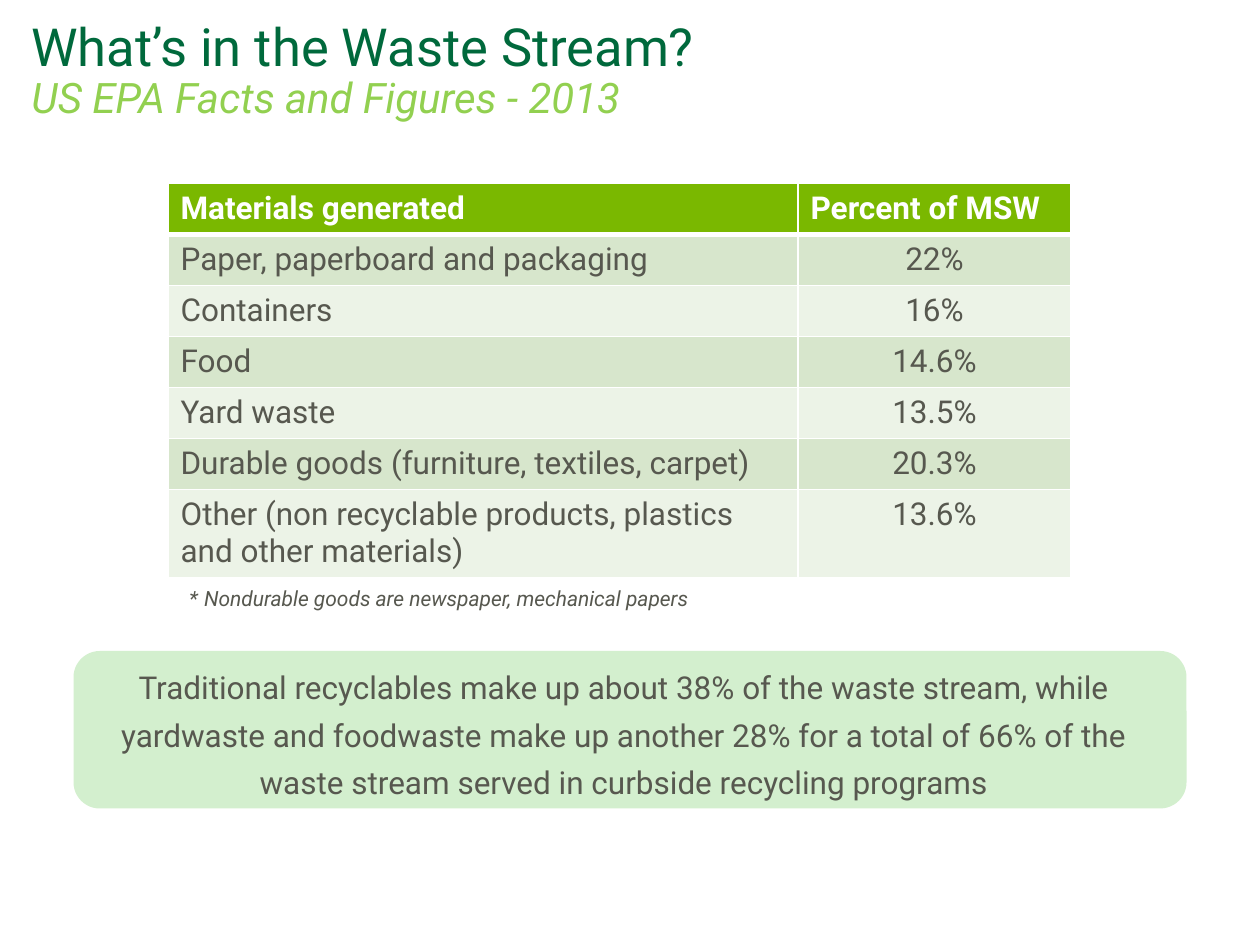
from lxml import etree
from pptx import Presentation, util as u
from pptx.dml.color import RGBColor
from pptx.enum import shapes, text
from pptx.oxml.ns import qn

HUE = {
    "title": "00693C",
    "lime": "92D050",
    "head": "7AB800",
    "dark": "D7E6CC",
    "pale": "ECF3E7",
    "note": "D3EFCE",
    "ink": "57584F",
    "white": "FFFFFF",
}
ROWS = [
    ("Materials generated", "Percent of MSW"),
    ("Paper, paperboard and packaging", "22%"),
    ("Containers", "16%"),
    ("Food", "14.6%"),
    ("Yard waste", "13.5%"),
    ("Durable goods (furniture, textiles, carpet)", "20.3%"),
    ("Other (non recyclable products, plastics and other materials)", "13.6%"),
]


def rgb(name):
    return RGBColor.from_string(HUE[name])


class Deck:
    unit = u.Inches(1) / 12
    face = "Roboto"

    def __init__(self, wide, high):
        self.prs = Presentation()
        self.prs.slide_width = self.span(wide)
        self.prs.slide_height = self.span(high)
        self.slide = self.prs.slides.add_slide(self.prs.slide_layouts[6])

    def span(self, count):
        return u.Emu(round(count * self.unit))

    def area(self, *grid):
        return [self.span(n) for n in grid]

    def style(self, font, size, hue, bold=False, slant=False):
        font.name = self.face
        font.size = u.Pt(size)
        font.color.rgb = rgb(hue)
        font.bold = bold
        font.italic = slant

    def frame(self, shape, space, right=0):
        body = shape.text_frame
        body.word_wrap = True
        body.margin_left = body.margin_top = body.margin_bottom = 0
        body.margin_right = u.Inches(right)
        para = body.paragraphs[0]
        para.line_spacing = space
        return para

    def label(self, *grid):
        return self.frame(self.slide.shapes.add_textbox(*self.area(*grid)), 0.9)

    def title(self, grid, head, sub):
        para = self.label(*grid)
        run = para.add_run()
        run.text = head
        self.style(run.font, 30, "title")
        para.add_line_break()
        run = para.add_run()
        run.text = sub
        self.style(run.font, 24, "lime", slant=True)

    def footnote(self, grid, words):
        para = self.label(*grid)
        para.text = "*\t" + words
        props = para._p.get_or_add_pPr()
        hang = u.Inches(0.12)
        props.set("marL", str(hang))
        props.set("indent", str(-hang))
        self.style(para.font, 12, "ink", slant=True)

    def border(self, cell, bottom):
        props = cell._tc.get_or_add_tcPr()
        for spot, side in enumerate("LRTB"):
            width = bottom if side == "B" else 1
            line = etree.Element(qn("a:ln" + side), w=str(u.Pt(width)))
            fill = etree.SubElement(line, qn("a:solidFill"))
            etree.SubElement(fill, qn("a:srgbClr"), val=HUE["white"])
            props.insert(spot, line)

    def table(self, grid, cols, step, rows):
        shape = self.slide.shapes.add_table(len(rows), len(cols), *self.area(*grid))
        table = shape.table
        for col, wide in zip(table.columns, cols):
            col.width = self.span(wide)
        for r, row in enumerate(rows):
            table.rows[r].height = self.span(step)
            head = r == 0
            hue = "head" if head else ("pale", "dark")[r % 2]
            for c, words in enumerate(row):
                cell = table.cell(r, c)
                cell.fill.solid()
                cell.fill.fore_color.rgb = rgb(hue)
                self.border(cell, 3 if head else 1)
                para = cell.text_frame.paragraphs[0]
                para.text = words
                if c and not head:
                    para.alignment = text.PP_ALIGN.CENTER
                self.style(para.font, 18, "white" if head else "ink", bold=head)
        shape.height = self.span(grid[3])

    def callout(self, grid, words):
        shape = self.slide.shapes.add_shape(
            shapes.MSO_SHAPE.ROUNDED_RECTANGLE, *self.area(*grid))
        shape.shadow.inherit = False
        shape.fill.solid()
        shape.fill.fore_color.rgb = rgb("note")
        shape.line.fill.background()
        para = self.frame(shape, 1.25, right=0.1)
        shape.text_frame.vertical_anchor = text.MSO_ANCHOR.MIDDLE
        para.text = words
        para.alignment = text.PP_ALIGN.CENTER
        self.style(para.font, 18, "ink")


def main():
    deck = Deck(120, 90)
    deck.title((3, 2, 108, 12.75), "What’s in the Waste Stream?",
               "US EPA Facts and Figures - 2013")
    deck.footnote((18, 56, 81, 6),
                  "Nondurable goods are newspaper, mechanical papers")
    deck.table((16, 17.5, 86, 37.5), (60, 26), 4.86, ROWS)
    deck.callout((7, 62, 106, 15),
                 "Traditional recyclables make up about 38% of the waste stream, "
                 "while yardwaste and foodwaste make up another 28% for a total of "
                 "66% of the waste stream served in curbside recycling programs")
    deck.prs.save("out.pptx")


if __name__ == "__main__":
    main()
